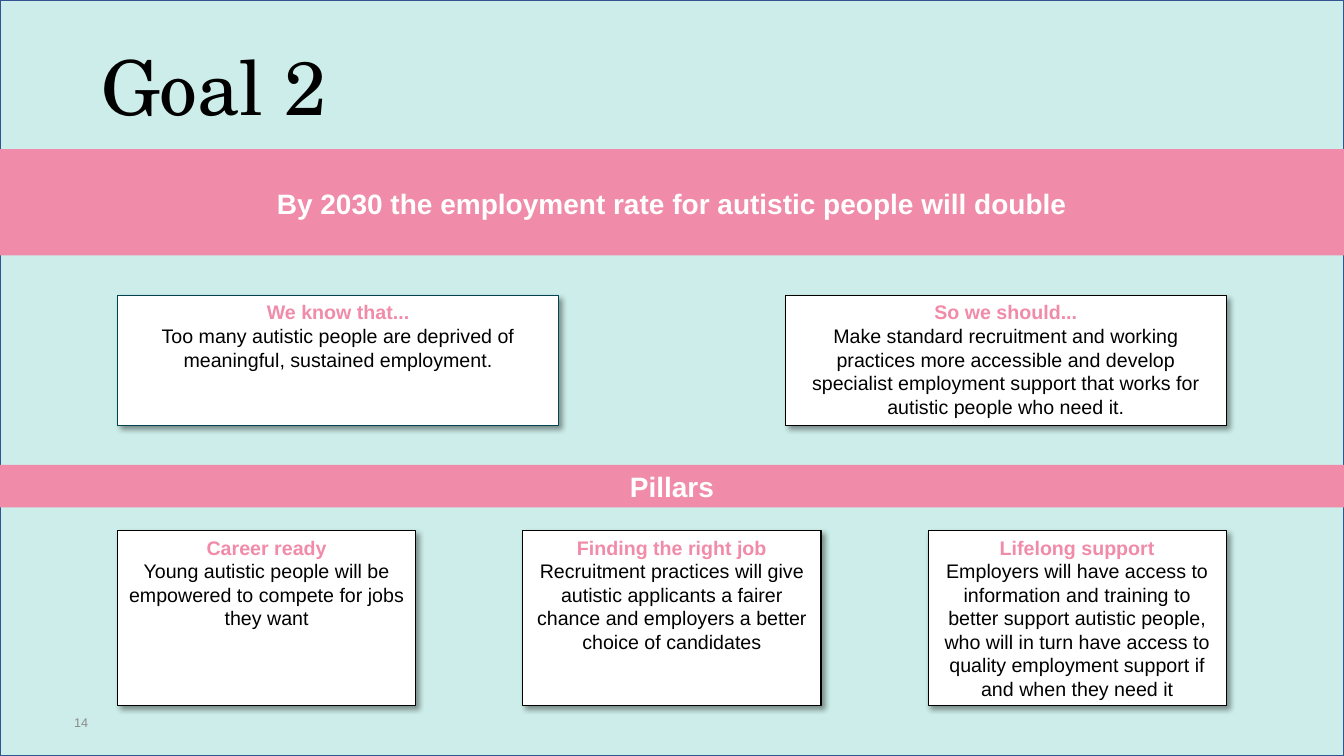
from lxml.etree import SubElement
from pptx import Presentation
from pptx.dml.color import RGBColor
from pptx.enum.shapes import MSO_SHAPE
from pptx.enum.text import MSO_ANCHOR, PP_ALIGN
from pptx.oxml.ns import qn
from pptx.util import Pt

COLOURS = {
    "mint": "CCEDE9",
    "pink": "F08BA9",
    "white": "FFFFFF",
    "black": "000000",
    "navy": "325491",
    "teal": "00444F",
    "grey": "8C8C8C",
}
SLIDE_WIDTH, SLIDE_HEIGHT = 960, 540
CARDS_LEFT, CARDS_WIDTH = 84, 792

FACTS = [
    ("We know that...", "Too many autistic people are deprived of meaningful, sustained employment.", "teal"),
    ("So we should...", "Make standard recruitment and working practices more accessible and develop "
     "specialist employment support that works for autistic people who need it.", "black"),
]
PILLARS = [
    ("Career ready", "Young autistic people will be empowered to compete for jobs they want", "black"),
    ("Finding the right job", "Recruitment practices will give autistic applicants a fairer chance "
     "and employers a better choice of candidates", "black"),
    ("Lifelong support", "Employers will have access to information and training to better support "
     "autistic people, who will in turn have access to quality employment support if and when "
     "they need it", "black"),
]


def colour(name):
    return RGBColor.from_string(COLOURS[name])


def format_paragraph(paragraph, size, colour_name, bold=False, align=PP_ALIGN.CENTER, font="Arial"):
    paragraph.alignment = align
    paragraph.font.name = font
    paragraph.font.size = Pt(size)
    paragraph.font.bold = bold
    paragraph.font.color.rgb = colour(colour_name)


def add_box(slide, left, top, width, height, fill, line=None, line_width=0.75):
    shape = slide.shapes.add_shape(MSO_SHAPE.RECTANGLE, Pt(left), Pt(top), Pt(width), Pt(height))
    shape.shadow.inherit = False
    shape.fill.solid()
    shape.fill.fore_color.rgb = colour(fill)
    if line:
        shape.line.color.rgb = colour(line)
        shape.line.width = Pt(line_width)
    else:
        shape.line.fill.background()
    shape.text_frame.word_wrap = True
    shape.text_frame.vertical_anchor = MSO_ANCHOR.TOP
    return shape


def add_drop_shadow(shape):
    effects = shape._element.spPr.find(qn("a:effectLst"))
    shadow = SubElement(effects, qn("a:outerShdw"), blurRad=str(Pt(4)), dist=str(Pt(3)),
                        dir=str(45 * 60000), algn="tl", rotWithShape="0")
    tint = SubElement(shadow, qn("a:srgbClr"), val=COLOURS["black"])
    SubElement(tint, qn("a:alpha"), val="40000")


def add_backdrop(slide):
    backdrop = add_box(slide, 0, 0, SLIDE_WIDTH, SLIDE_HEIGHT, "mint", "navy", 1)
    # Send behind the title placeholder
    slide.shapes._spTree.insert(2, backdrop._element)


def add_title(slide, left, top, width, height):
    title = slide.shapes.title
    title.left, title.top, title.width, title.height = Pt(left), Pt(top), Pt(width), Pt(height)
    title.text_frame.text = "Goal 2"
    title.text_frame.vertical_anchor = MSO_ANCHOR.TOP
    format_paragraph(title.text_frame.paragraphs[0], 54, "black",
                     align=PP_ALIGN.LEFT, font="TeX Gyre Schola")


def add_band(slide, top, height, text, margin_top=3.6):
    band = add_box(slide, 0, top, SLIDE_WIDTH, height, "pink")
    band.text_frame.margin_top = Pt(margin_top)
    band.text_frame.text = text
    format_paragraph(band.text_frame.paragraphs[0], 20, "white", bold=True)


def add_card_row(slide, left, top, width, height, card_width, cards):
    step = (width - card_width) / (len(cards) - 1)
    for index, (heading, body, line) in enumerate(cards):
        card = add_box(slide, left + index * step, top, card_width, height, "white", line)
        add_drop_shadow(card)
        card.text_frame.text = f"{heading}\n{body}"
        heading_paragraph, body_paragraph = card.text_frame.paragraphs
        format_paragraph(heading_paragraph, 14, "pink", bold=True)
        format_paragraph(body_paragraph, 14, "black")


def add_slide_number(slide, left, top, width, height):
    number = slide.shapes.add_textbox(Pt(left), Pt(top), Pt(width), Pt(height))
    number.text_frame.word_wrap = True
    number.text_frame.vertical_anchor = MSO_ANCHOR.MIDDLE
    number.text_frame.text = "14"
    format_paragraph(number.text_frame.paragraphs[0], 9, "grey", align=PP_ALIGN.RIGHT)


def build_goal_slide(presentation):
    slide = presentation.slides.add_slide(presentation.slide_layouts[5])
    add_backdrop(slide)
    add_title(slide, 65, 25, 598, 73)
    add_slide_number(slide, 29, 504, 41, 24)
    # Goal statement and its reasons
    add_band(slide, 106.5, 76, "By 2030 the employment rate for autistic people will double", margin_top=26.6)
    add_card_row(slide, CARDS_LEFT, 211, CARDS_WIDTH, 93, 315, FACTS)
    # Pillars
    add_card_row(slide, CARDS_LEFT, 379, CARDS_WIDTH, 125, 213, PILLARS)
    add_band(slide, 332, 30.5, "Pillars")


def main():
    presentation = Presentation()
    presentation.slide_width, presentation.slide_height = Pt(SLIDE_WIDTH), Pt(SLIDE_HEIGHT)
    build_goal_slide(presentation)
    presentation.save("out.pptx")


if __name__ == "__main__":
    main()
